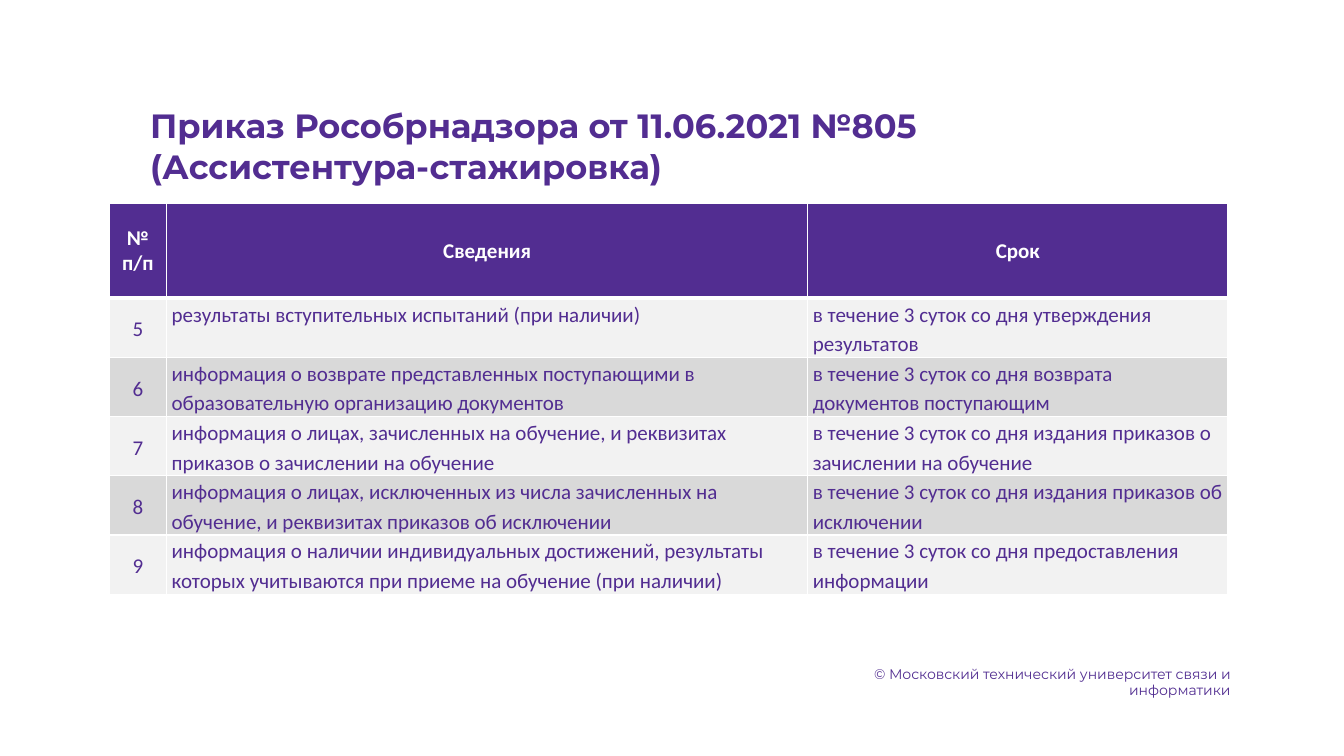
from lxml.etree import SubElement
from pptx import Presentation
from pptx.dml.color import RGBColor
from pptx.enum.text import MSO_ANCHOR, MSO_AUTO_SIZE, PP_ALIGN
from pptx.oxml.ns import qn
from pptx.util import Pt

VIOLET, WHITE = "522D91", "FFFFFF"
BANDS = ["F2F2F2", "D9D9D9"]
WIDTHS = [41, 458, 300]
HEAD = ["№ п/п", "Сведения", "Срок"]
ROWS = [
    ["5", "результаты вступительных испытаний (при наличии)",
     "в течение 3 суток со дня утверждения результатов"],
    ["6", "информация о возврате представленных поступающими в "
     "образовательную организацию документов",
     "в течение 3 суток со дня возврата документов поступающим"],
    ["7", "информация о лицах, зачисленных на обучение, и реквизитах "
     "приказов о зачислении на обучение",
     "в течение 3 суток со дня издания приказов о зачислении на обучение"],
    ["8", "информация о лицах, исключенных из числа зачисленных на обучение, "
     "и реквизитах приказов об исключении",
     "в течение 3 суток со дня издания приказов об исключении"],
    ["9", "информация о наличии индивидуальных достижений, результаты "
     "которых учитываются при приеме на обучение (при наличии)",
     "в течение 3 суток со дня предоставления информации"],
]


def color(code):
    return RGBColor.from_string(code)


def write(frame, text, size, face, code, bold=False, align=PP_ALIGN.LEFT):
    par = frame.paragraphs[0]
    par.alignment = align
    run = par.add_run()
    run.text = text
    font = run.font
    font.size, font.name, font.bold = Pt(size), face, bold
    font.color.rgb = color(code)
    return par


def place(shape, left, top, width, height):
    shape.left, shape.top = Pt(left), Pt(top)
    shape.width, shape.height = Pt(width), Pt(height)


def add_title(slide, text):
    title = slide.shapes.title
    place(title, 100, 71.5, 748, 65.5)
    frame = title.text_frame
    frame.word_wrap = True
    frame.auto_size = MSO_AUTO_SIZE.NONE
    frame.vertical_anchor = MSO_ANCHOR.TOP
    write(frame, text, 24, "Montserrat", VIOLET, True)


def add_note(slide, text):
    box = slide.shapes.add_textbox(Pt(597), Pt(471.5), Pt(289), Pt(32))
    frame = box.text_frame
    frame.word_wrap = True
    write(frame, text, 10, "Montserrat", "522E91", align=PP_ALIGN.RIGHT)


def edge(cell, row):
    # The rule under the header row is thicker
    sides = {"L": 1, "R": 1, "T": 3 if row == 1 else 1, "B": 3 if row == 0 else 1}
    props = cell._tc.get_or_add_tcPr()
    for side, width in sides.items():
        line = SubElement(props, qn("a:ln" + side), w=str(Pt(width)))
        fill = SubElement(line, qn("a:solidFill"))
        SubElement(fill, qn("a:srgbClr"), val=WHITE)


def fill_cell(cell, text, row, col):
    head = row == 0
    mid = head or col == 0
    edge(cell, row)
    cell.fill.solid()
    cell.fill.fore_color.rgb = color(VIOLET if head else BANDS[(row - 1) % 2])
    cell.vertical_anchor = MSO_ANCHOR.MIDDLE if mid else MSO_ANCHOR.TOP
    cell.margin_left = cell.margin_right = Pt(0.7 if mid else 3.6)
    cell.margin_top = cell.margin_bottom = Pt(0.7 if mid else 0)
    par = write(cell.text_frame, text, 15, "Calibri", WHITE if head else VIOLET,
                head, PP_ALIGN.CENTER if mid else PP_ALIGN.LEFT)
    if not head:
        par.line_spacing = 1.15


def add_grid(slide, rows):
    tall = [67.5] + [42.3] * (len(rows) - 1)
    table = slide.shapes.add_table(len(rows), len(WIDTHS), Pt(78), Pt(145.5),
                                   Pt(sum(WIDTHS)), Pt(sum(tall))).table
    for col, width in enumerate(WIDTHS):
        table.columns[col].width = Pt(width)
    for row, texts in enumerate(rows):
        table.rows[row].height = Pt(tall[row])
        for col, text in enumerate(texts):
            fill_cell(table.cell(row, col), text, row, col)


def main():
    deck = Presentation()
    deck.slide_width, deck.slide_height = Pt(960), Pt(540)
    slide = deck.slides.add_slide(deck.slide_layouts[5])
    # Table of items and due dates
    add_grid(slide, [HEAD] + ROWS)
    # Heading and copyright line
    add_title(slide, "Приказ Рособрнадзора от 11.06.2021 №805 (Ассистентура-стажировка)")
    add_note(slide, "© Московский технический университет связи и информатики")
    deck.save("out.pptx")


if __name__ == "__main__":
    main()
